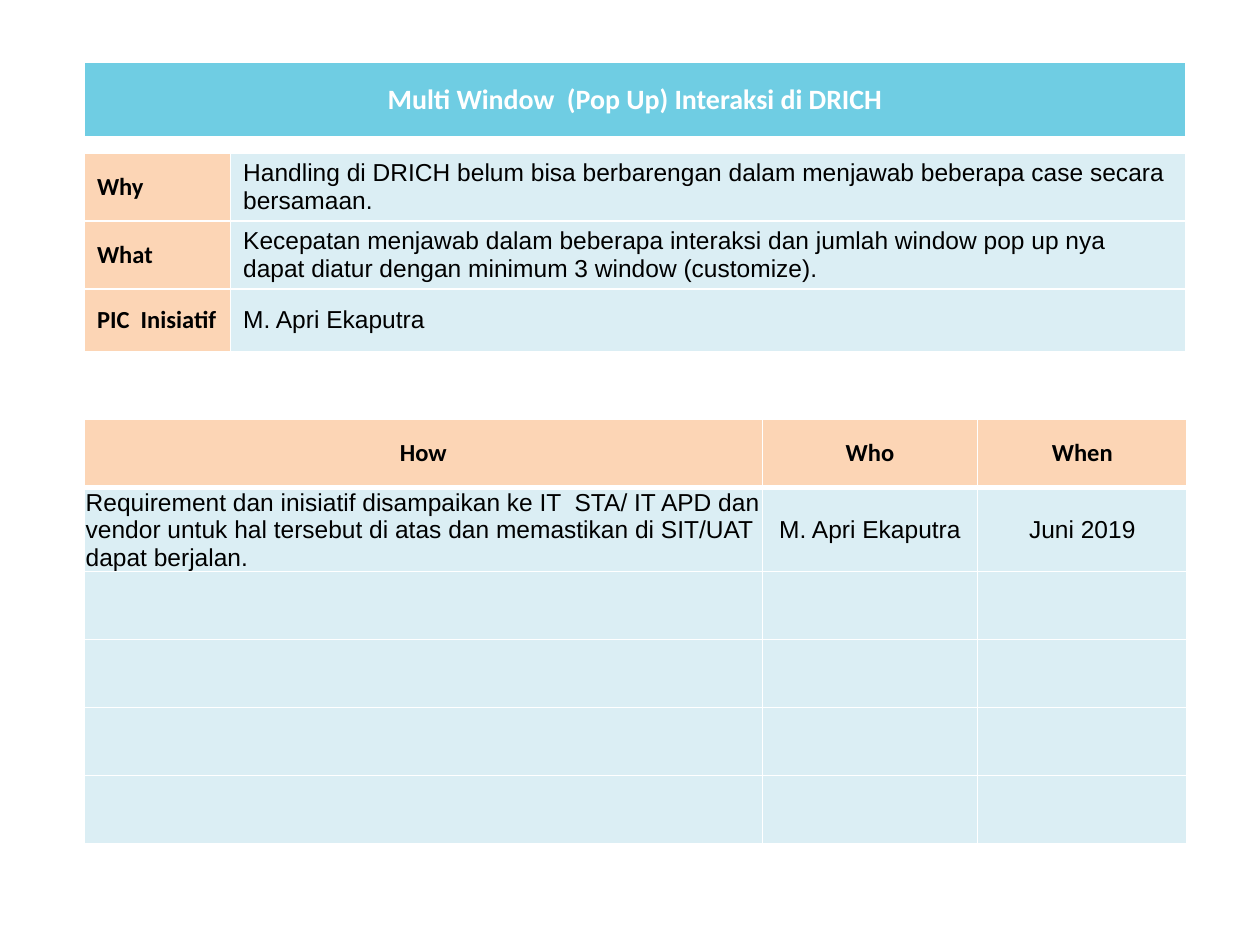
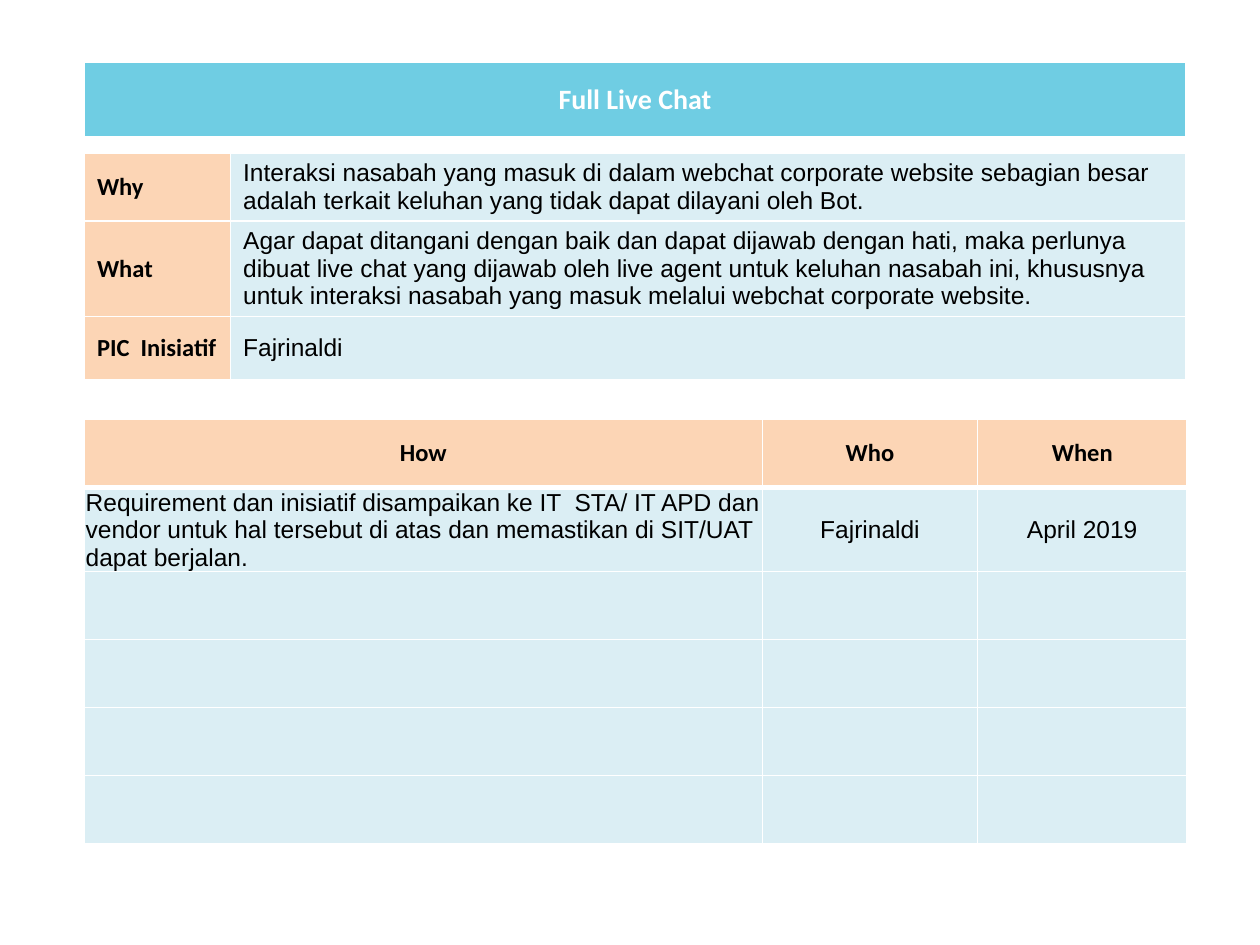
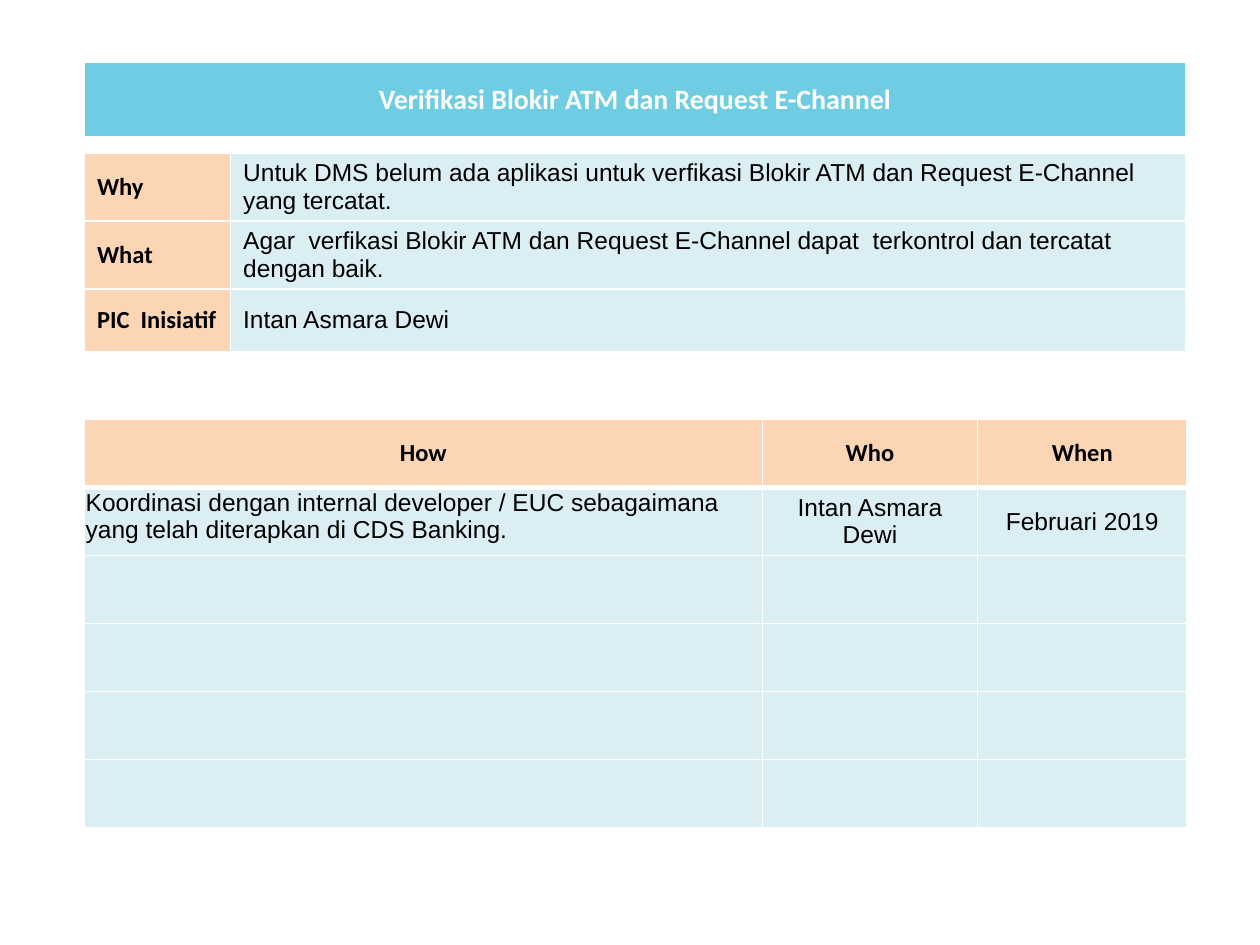
from dataclasses import dataclass

from lxml import etree
from pptx import Presentation
from pptx.dml.color import RGBColor
from pptx.enum.text import MSO_ANCHOR, PP_ALIGN
from pptx.oxml.ns import qn
from pptx.util import Inches, Pt

CENTER, LEFT = PP_ALIGN.CENTER, PP_ALIGN.LEFT
MIDDLE, TOP = MSO_ANCHOR.MIDDLE, MSO_ANCHOR.TOP

WHITE, BLACK = "FFFFFF", "000000"
TITLE_BLUE, LABEL_PEACH, BODY_BLUE = "6FCDE3", "FCD5B5", "DBEEF4"

TABLE_LEFT = 0.67
SUMMARY_TOP, ACTION_TOP = 0.49, 3.33
SUMMARY_COLUMNS = [1.16, 7.58]
SUMMARY_ROWS = [0.61, 0.01, 0.53, 0.42, 0.5]
ACTION_COLUMNS = [5.38, 1.71, 1.66]
ACTION_ROWS = [0.54] * 6
ACTION_HEADINGS = ["How", "Who", "When"]
TIGHT_MARGINS = {
    "margin_left": Inches(0.01),
    "margin_top": Inches(0.01),
    "margin_right": Inches(0.01),
    "margin_bottom": Inches(0),
}


@dataclass(frozen=True)
class CellStyle:
    fill: str
    font: str = "Arial"
    size: int = 14
    color: str = BLACK
    bold: bool = False
    align: PP_ALIGN = LEFT
    anchor: MSO_ANCHOR = MIDDLE
    bottom_border: int = 1
    tight: bool = False


@dataclass(frozen=True)
class Initiative:
    title: str
    why: str
    what: str
    owner: str
    how: str
    when: str
    summary_height: float = 2.37
    action_height: float = 3.39


TITLE = CellStyle(TITLE_BLUE, "Calibri", 16, WHITE, True, CENTER, bottom_border=3)
SPACER = CellStyle(WHITE, size=1)
LABEL = CellStyle(LABEL_PEACH, "Calibri", bold=True)
HEADING = CellStyle(LABEL_PEACH, "Calibri", bold=True, align=CENTER, bottom_border=3)
BODY = CellStyle(BODY_BLUE)
BODY_CENTERED = CellStyle(BODY_BLUE, align=CENTER)
ACTION = CellStyle(BODY_BLUE, anchor=TOP, tight=True)

VENDOR_ACTION = (
    "Requirement dan inisiatif disampaikan ke IT  STA/ IT APD dan vendor "
    "untuk hal tersebut di atas dan memastikan di SIT/UAT dapat berjalan."
)

INITIATIVES = [
    Initiative(
        title="Multi Window  (Pop Up) Interaksi di DRICH",
        why="Handling di DRICH belum bisa berbarengan dalam menjawab beberapa "
        "case secara bersamaan.",
        what="Kecepatan menjawab dalam beberapa interaksi dan jumlah window "
        "pop up nya dapat diatur dengan minimum 3 window (customize).",
        owner="M. Apri Ekaputra",
        how=VENDOR_ACTION,
        when="Juni 2019",
    ),
    Initiative(
        title="Full Live Chat",
        why="Interaksi nasabah yang masuk di dalam webchat corporate website "
        "sebagian besar adalah terkait keluhan yang tidak dapat dilayani oleh Bot.",
        what="Agar dapat ditangani dengan baik dan dapat dijawab dengan hati, "
        "maka perlunya dibuat live chat yang dijawab oleh live agent untuk "
        "keluhan nasabah ini, khususnya untuk interaksi nasabah yang masuk "
        "melalui webchat corporate website.",
        owner="Fajrinaldi",
        how=VENDOR_ACTION,
        when="April 2019",
        summary_height=2.6,
    ),
    Initiative(
        title="Verifikasi Blokir ATM dan Request E-Channel",
        why="Untuk DMS belum ada aplikasi untuk verfikasi Blokir ATM dan "
        "Request E-Channel yang tercatat.",
        what="Agar  verfikasi Blokir ATM dan Request E-Channel dapat  "
        "terkontrol dan tercatat dengan baik.",
        owner="Intan Asmara Dewi",
        how="Koordinasi dengan internal developer / EUC sebagaimana yang telah "
        "diterapkan di CDS Banking.",
        when="Februari 2019",
        action_height=3.25,
    ),
]


def rgb(color: str) -> RGBColor:
    return RGBColor.from_string(color)


def set_attributes(target, values: dict) -> None:
    for name, value in values.items():
        setattr(target, name, value)


def add_borders(cell, bottom_width: int) -> None:
    properties = cell._tc.get_or_add_tcPr()
    widths = {"lnL": 1, "lnR": 1, "lnT": 1, "lnB": bottom_width}
    for position, (side, width) in enumerate(widths.items()):
        line = etree.Element(qn(f"a:{side}"), w=str(Pt(width)))
        fill = etree.SubElement(line, qn("a:solidFill"))
        etree.SubElement(fill, qn("a:srgbClr"), val=WHITE)
        properties.insert(position, line)


def write_cell(cell, text: str, style: CellStyle) -> None:
    cell.fill.solid()
    cell.fill.fore_color.rgb = rgb(style.fill)
    add_borders(cell, style.bottom_border)
    cell.vertical_anchor = style.anchor
    if style.tight:
        set_attributes(cell, TIGHT_MARGINS)
    para = cell.text_frame.paragraphs[0]
    para.alignment = style.align
    if text:
        span = para.add_run()
        span.text = text
        set_attributes(
            span.font,
            {"name": style.font, "size": Pt(style.size), "bold": style.bold},
        )
        span.font.color.rgb = rgb(style.color)
    else:
        etree.SubElement(para._p, qn("a:endParaRPr"), sz=str(style.size * 100))


def add_grid(
    page,
    top: float,
    height: float,
    columns: list[float],
    rows: list[float],
    cells: list[list[tuple[str, CellStyle]]],
):
    frame = page.shapes.add_table(
        len(rows), len(columns), Inches(TABLE_LEFT), Inches(top),
        Inches(sum(columns)), Inches(height),
    )
    table = frame.table
    set_attributes(table, {"first_row": False, "horz_banding": False})
    for column, width in zip(table.columns, columns):
        column.width = Inches(width)
    for row, row_height in zip(table.rows, rows):
        row.height = Inches(row_height)
    frame.height = Inches(height)
    for row, contents in zip(table.rows, cells):
        for cell, (text, style) in zip(row.cells, contents):
            write_cell(cell, text, style)
    return table


def add_summary(page, item: Initiative) -> None:
    facts = {"Why": item.why, "What": item.what, "PIC  Inisiatif": item.owner}
    cells = [[(item.title, TITLE), ("", TITLE)], [("", SPACER)] * 2]
    cells += [[(label, LABEL), (text, BODY)] for label, text in facts.items()]
    table = add_grid(
        page, SUMMARY_TOP, item.summary_height, SUMMARY_COLUMNS, SUMMARY_ROWS, cells
    )
    table.cell(0, 0).merge(table.cell(0, 1))


def add_actions(page, item: Initiative) -> None:
    cells = [
        [(heading, HEADING) for heading in ACTION_HEADINGS],
        [(item.how, ACTION), (item.owner, BODY_CENTERED), (item.when, BODY_CENTERED)],
    ]
    cells += [[("", BODY)] * len(ACTION_COLUMNS)] * (len(ACTION_ROWS) - len(cells))
    add_grid(page, ACTION_TOP, item.action_height, ACTION_COLUMNS, ACTION_ROWS, cells)


def main() -> None:
    deck = Presentation()
    set_attributes(deck, {"slide_width": Inches(10), "slide_height": Inches(7.5)})
    for item in INITIATIVES:
        page = deck.slides.add_slide(deck.slide_layouts[6])
        add_summary(page, item)
        add_actions(page, item)
    deck.save("out.pptx")


if __name__ == "__main__":
    main()
